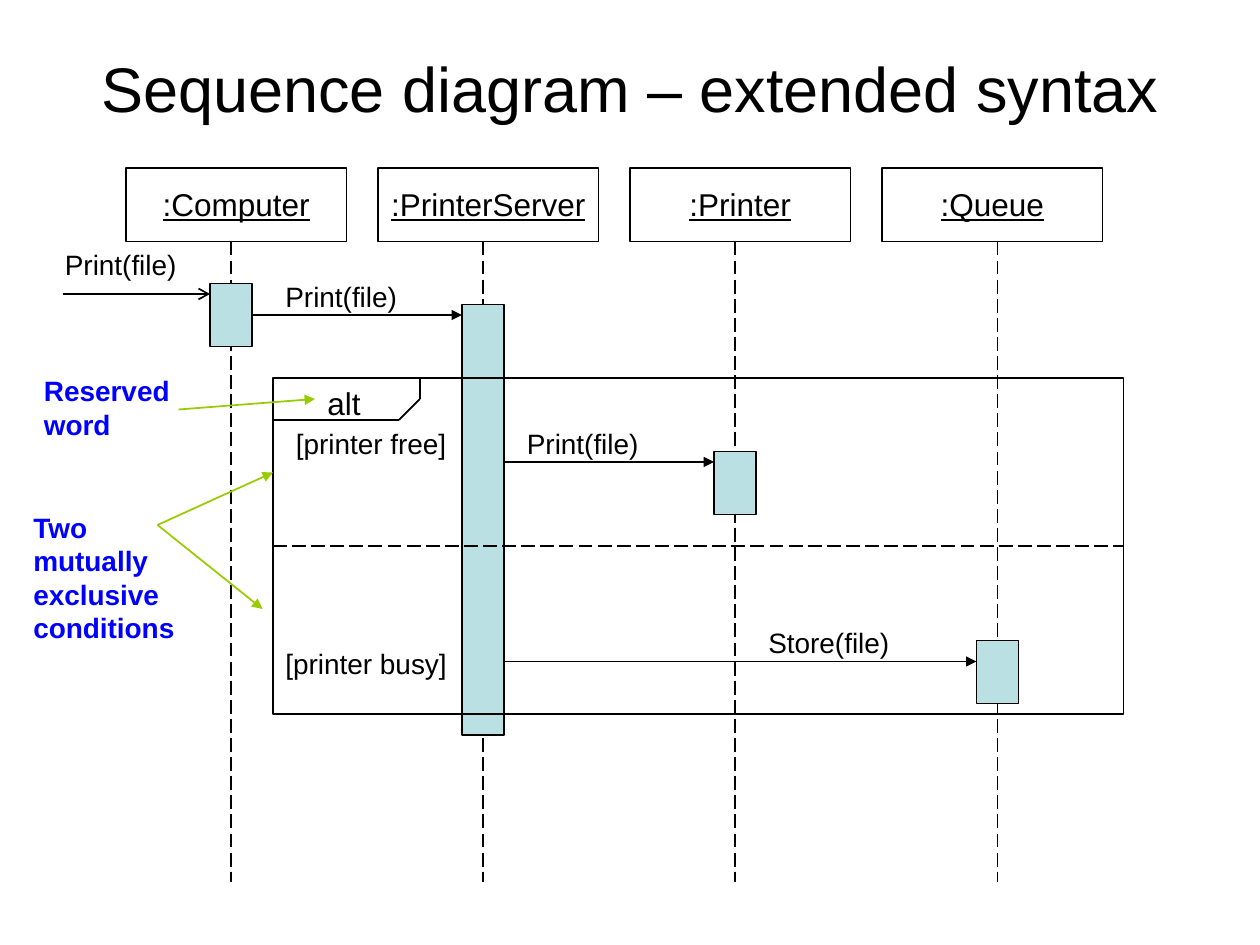
from lxml.etree import SubElement
from pptx import Presentation
from pptx.dml.color import RGBColor
from pptx.enum.dml import MSO_LINE
from pptx.enum.shapes import MSO_CONNECTOR, MSO_SHAPE
from pptx.enum.text import MSO_ANCHOR, MSO_AUTO_SIZE, PP_ALIGN
from pptx.oxml.ns import qn
from pptx.util import Pt

PX = 7620  # EMU in one px, 120 px to the inch
FONT = "Arial"
BLACK, BLUE, GREEN, TEAL = "000000", "0000FF", "99CC00", "BBE0E3"

HEAD_STEP, HEAD_WIDTH, HEAD_HEIGHT = 240, 210, 70
# name, label inset, lifeline x, activation top and height
PARTICIPANTS = [
    (":Computer", 10, 100, 110, 60),
    (":PrinterServer", 0, 340, 130, 410),
    (":Printer", 0, 580, 270, 60),
    (":Queue", 0, 830, 450, 60),
]
# start x, end x, y, arrowhead, label, label box
MESSAGES = [
    (60, 200, 280, "arrow", "Print(file)", (50, 230, 150, 44)),
    (230, 440, 300, "triangle", "Print(file)", (260, 260, 160, 44)),
    (480, 680, 440, "triangle", "Print(file)", (490, 400, 170, 44)),
    (470, 930, 630, "triangle", "Store(file)", (720, 590, 170, 44)),
]


def color(value):
    return RGBColor.from_string(value)


def px(*lengths):
    return [length * PX for length in lengths]


def add_run(paragraph, text, size, ink=BLACK, bold=None, underline=None):
    run = paragraph.add_run()
    run.text = text
    font = run.font
    font.name, font.size, font.bold, font.underline = FONT, Pt(size), bold, underline
    font.color.rgb = color(ink)


def add_text(slide, box, text, size=16, align=PP_ALIGN.LEFT, **style):
    frame = slide.shapes.add_textbox(*px(*box)).text_frame
    frame.word_wrap = True
    frame.auto_size = MSO_AUTO_SIZE.SHAPE_TO_FIT_TEXT
    paragraph = frame.paragraphs[0]
    paragraph.alignment = align
    add_run(paragraph, text, size, **style)


def add_box(slide, box, fill=None):
    shape = slide.shapes.add_shape(MSO_SHAPE.RECTANGLE, *px(*box))
    shape.shadow.inherit = False
    if fill:
        shape.fill.solid()
        shape.fill.fore_color.rgb = color(fill)
    else:
        shape.fill.background()
    shape.line.color.rgb = color(BLACK)
    shape.line.width = Pt(1)
    return shape


def add_line(slide, start, end, ink=BLACK, dashed=False, head=None):
    connector = slide.shapes.add_connector(MSO_CONNECTOR.STRAIGHT, *px(*start, *end))
    line = connector.line
    line.color.rgb = color(ink)
    line.width = Pt(1)
    if dashed:
        line.dash_style = MSO_LINE.LONG_DASH
    if head:
        SubElement(line._get_or_add_ln(), qn("a:tailEnd"), type=head, w="med", len="med")
    SubElement(connector._element.spPr, qn("a:effectLst"))
    return connector


def add_title(slide, box, text):
    title = slide.shapes.title
    title.left, title.top, title.width, title.height = px(*box)
    frame = title.text_frame
    frame.auto_size = MSO_AUTO_SIZE.NONE
    frame.vertical_anchor = MSO_ANCHOR.MIDDLE
    frame.paragraphs[0].alignment = PP_ALIGN.CENTER
    add_run(frame.paragraphs[0], text, 36)


def add_heads(slide, left, top):
    for index, (name, inset, *_) in enumerate(PARTICIPANTS):
        x = left + index * HEAD_STEP
        add_box(slide, (x, top, HEAD_WIDTH, HEAD_HEIGHT))
        add_text(slide, (x + inset, top + 10, HEAD_WIDTH - 2 * inset, 48), name,
                 size=18, align=PP_ALIGN.CENTER, underline=True)


def add_lifelines(slide, left, top, height):
    for _, _, x, _, _ in PARTICIPANTS:
        add_line(slide, (left + x, top + HEAD_HEIGHT), (left + x, top + height), dashed=True)


def add_messages(slide):
    for start, end, y, head, label, box in MESSAGES:
        add_line(slide, (start, y), (end, y), head=head)
        add_text(slide, box, label)


def add_activations(slide, left, top, width=40):
    for _, _, x, offset, height in PARTICIPANTS:
        add_box(slide, (left + x - width // 2, top + offset, width, height), TEAL)


def add_alternatives(slide, left, top, width, height):
    """Add the alt frame with its divider, corner tab and two guards."""
    frame = add_box(slide, (left, top, width, height))
    middle = top + height // 2
    divider = add_line(slide, (left, middle), (left + width, middle), dashed=True)
    divider.begin_connect(frame, 1)
    divider.end_connect(frame, 3)
    corners = [(left, top + 40), (left + 120, top + 40), (left + 140, top + 20), (left + 140, top)]
    for start, end in zip(corners, corners[1:]):
        add_line(slide, start, end)
    add_text(slide, (left + 40, top, 70, 48), "alt", size=18)
    add_text(slide, (left + 10, top + 40, 170, 44), "[printer free]")
    add_text(slide, (left, top + 250, 210, 44), "[printer busy]")


def add_note(slide, box, text, start, targets):
    add_text(slide, box, text, ink=BLUE, bold=True)
    for target in targets:
        add_line(slide, start, target, ink=GREEN, head="triangle")


def main():
    presentation = Presentation()
    presentation.slide_width, presentation.slide_height = px(1200, 900)
    slide = presentation.slides.add_slide(presentation.slide_layouts[5])
    add_title(slide, (60, 36, 1080, 94), "Sequence diagram – extended syntax")
    add_heads(slide, 120, 160)
    add_lifelines(slide, 120, 160, 680)
    add_messages(slide)
    add_activations(slide, 120, 160)
    add_alternatives(slide, 260, 360, 810, 320)
    add_note(slide, (20, 480, 180, 140), "Two mutually exclusive conditions",
             (150, 500), [(260, 450), (250, 580)])
    add_note(slide, (30, 350, 160, 77), "Reserved word", (170, 390), [(300, 380)])
    presentation.save("out.pptx")


if __name__ == "__main__":
    main()
